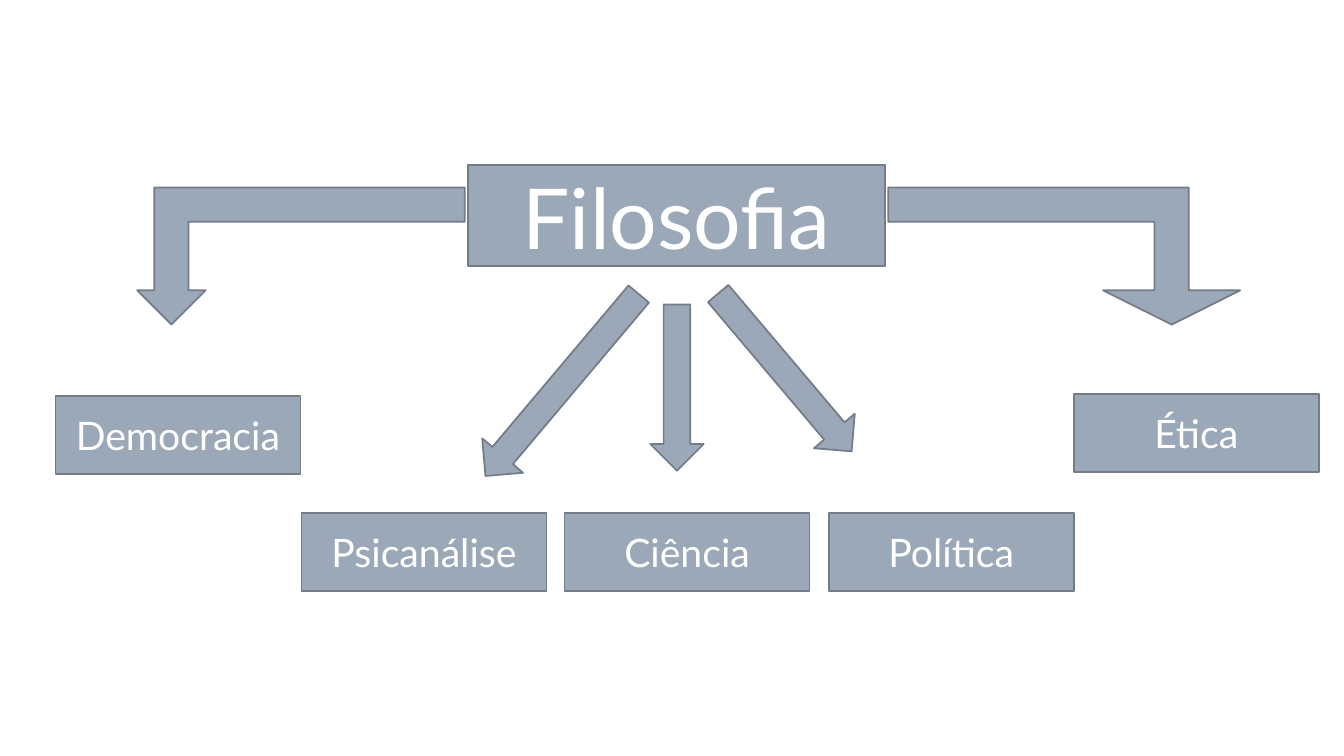
from dataclasses import dataclass

from pptx import Presentation
from pptx.dml.color import RGBColor
from pptx.enum.shapes import MSO_SHAPE
from pptx.enum.text import MSO_ANCHOR, PP_ALIGN
from pptx.shapes.autoshape import Shape
from pptx.slide import Slide
from pptx.util import Inches, Pt

COLORS = {"fill": "9BA8B7", "line": "737C87", "text": "FFFFFF"}
FONT = "Lato"
TOPIC_SIZE = (2.43, 0.77)
BRANCH_TOP = 5.09


@dataclass
class Box:
    text: str
    left: float
    top: float
    width: float = TOPIC_SIZE[0]
    height: float = TOPIC_SIZE[1]
    font_size: int = 28


@dataclass
class Arrow:
    kind: MSO_SHAPE
    left: float
    top: float
    width: float
    height: float
    rotation: float = 0
    flipped: bool = False
    adjustments: tuple[float, ...] = ()


BOXES = [
    Box("Filosofia", 4.64, 1.64, 4.14, 1, 60),
    Box("Democracia", 0.55, 3.93),
    Box("Psicanálise", 2.99, BRANCH_TOP),
    Box("Ciência", 5.6, BRANCH_TOP),
    Box("Política", 8.22, BRANCH_TOP),
    Box("Ética", 10.65, 3.91),
]

ARROWS = [
    Arrow(MSO_SHAPE.DOWN_ARROW, 5.31, 2.64, 0.53, 2.36, 40.1),
    Arrow(MSO_SHAPE.DOWN_ARROW, 6.45, 3.02, 0.53, 1.65),
    Arrow(MSO_SHAPE.DOWN_ARROW, 7.52, 2.67, 0.53, 2.05, 319.8),
    Arrow(MSO_SHAPE.BENT_UP_ARROW, 1.36, 1.86, 3.25, 1.36, 180),
    Arrow(MSO_SHAPE.BENT_UP_ARROW, 8.81, 1.86, 3.49, 1.36, 180, True, (0.25, 0.5, 0.25)),
]


def add_styled_shape(slide: Slide, kind: MSO_SHAPE, item: Box | Arrow) -> Shape:
    shape = slide.shapes.add_shape(
        kind, Inches(item.left), Inches(item.top), Inches(item.width), Inches(item.height)
    )
    shape.shadow.inherit = False
    shape.fill.solid()
    shape.fill.fore_color.rgb = RGBColor.from_string(COLORS["fill"])
    shape.line.color.rgb = RGBColor.from_string(COLORS["line"])
    shape.line.width = Pt(1.25)
    return shape


def add_box(slide: Slide, box: Box) -> None:
    shape = add_styled_shape(slide, MSO_SHAPE.RECTANGLE, box)
    text_frame = shape.text_frame
    text_frame.text = box.text
    text_frame.word_wrap = True
    text_frame.vertical_anchor = MSO_ANCHOR.MIDDLE
    paragraph = text_frame.paragraphs[0]
    paragraph.alignment = PP_ALIGN.CENTER
    font = paragraph.runs[0].font
    font.name = FONT
    font.size = Pt(box.font_size)
    font.color.rgb = RGBColor.from_string(COLORS["text"])


def add_arrow(slide: Slide, arrow: Arrow) -> None:
    shape = add_styled_shape(slide, arrow.kind, arrow)
    shape.rotation = arrow.rotation
    for index, value in enumerate(arrow.adjustments):
        shape.adjustments[index] = value
    if arrow.flipped:
        shape.element.spPr.get_or_add_xfrm().set("flipH", "1")


def main() -> None:
    presentation = Presentation()
    presentation.slide_width = Inches(13.33)
    presentation.slide_height = Inches(7.5)
    slide = presentation.slides.add_slide(presentation.slide_layouts[6])

    # Central subject and its topics
    for box in BOXES:
        add_box(slide, box)

    # Arrows from the subject to each topic
    for arrow in ARROWS:
        add_arrow(slide, arrow)

    presentation.save("out.pptx")


if __name__ == "__main__":
    main()
